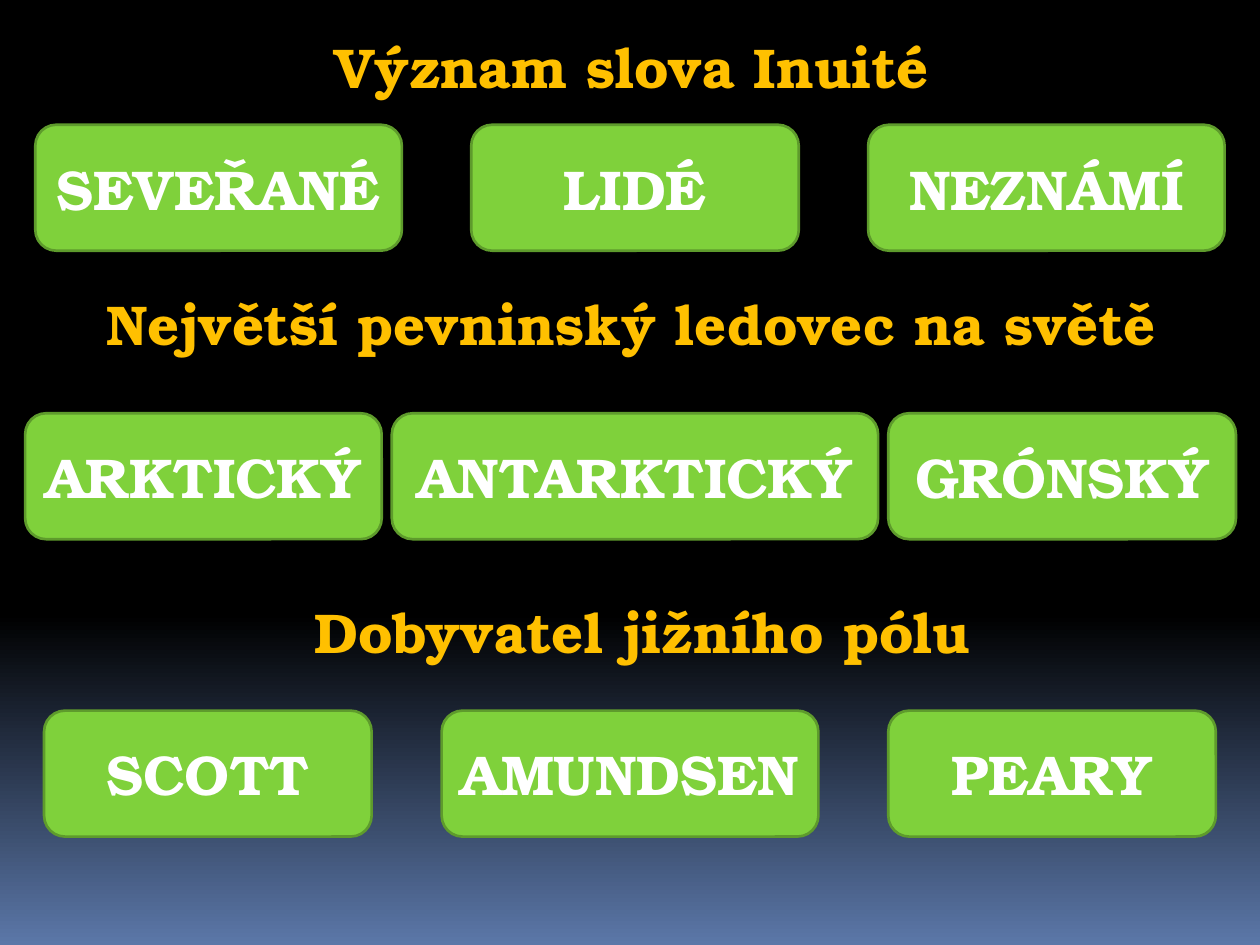
from copy import deepcopy

from pptx import Presentation
from pptx.dml.color import RGBColor
from pptx.enum.shapes import MSO_SHAPE
from pptx.enum.text import MSO_ANCHOR, MSO_AUTO_SIZE, PP_ALIGN
from pptx.oxml.ns import qn
from pptx.util import Inches, Pt

FONT = "TeX Gyre Bonum"
COLS, ROWS = 100, 75
ANSWER_ROWS = 10
TITLE_ROWS = 6.4

prs = Presentation()
prs.slide_width, prs.slide_height = Inches(10), Inches(7.5)


def color(value):
    return RGBColor.from_string(value)


def grid(left, top, width, height):
    col, row = prs.slide_width / COLS, prs.slide_height / ROWS
    return [round(n) for n in (left * col, top * row, width * col, height * row)]


def add_run(p, text, fill):
    r = p.add_run()
    r.text = text
    r.font.name = FONT
    r.font.size = Pt(32)
    r.font.bold = True
    r.font.color.rgb = color(fill)


def set_background(s, stops):
    fill = s.background.fill
    fill.gradient()
    fill.gradient_angle = 270
    gs_list = s._element.find(".//" + qn("a:gsLst"))
    gs_list.insert(1, deepcopy(gs_list[0]))
    for stop, (position, value) in zip(fill.gradient_stops, stops):
        stop.position = position
        stop.color.rgb = color(value)


def add_title(s, box, text):
    sp = s.shapes.add_textbox(*grid(*box))
    tf = sp.text_frame
    tf.word_wrap = False
    tf.auto_size = MSO_AUTO_SIZE.SHAPE_TO_FIT_TEXT
    add_run(tf.paragraphs[0], text, "FFC000")


def add_answer(s, box, text):
    sp = s.shapes.add_shape(MSO_SHAPE.ROUNDED_RECTANGLE, *grid(*box))
    sp.shadow.inherit = False
    sp.fill.solid()
    sp.fill.fore_color.rgb = color("7FD13B")
    sp.line.color.rgb = color("5E9B2C")
    sp.line.width = Pt(1.5)
    tf = sp.text_frame
    tf.vertical_anchor = MSO_ANCHOR.MIDDLE
    p = tf.paragraphs[0]
    p.alignment = PP_ALIGN.CENTER
    add_run(p, text, "FFFFFF")


def add_question(s, box, title, title_left, title_width, answers):
    left, top, width, height = box
    add_title(s, (title_left, top, title_width, TITLE_ROWS), title)
    gap = (width - sum(w for _, w in answers)) / (len(answers) - 1)
    answer_top = top + height - ANSWER_ROWS
    for text, w in answers:
        add_answer(s, (left, answer_top, w, ANSWER_ROWS), text)
        left += w + gap


def main():
    s = prs.slides.add_slide(prs.slide_layouts[6])
    set_background(s, [(0, "000000"), (0.65, "000000"), (1, "5B77A8")])
    add_question(s, (2.8, 2.1, 94.4, 17.8), "Význam slova Inuité", 25.6, 49.8,
                 [("SEVEŘANÉ", 29.1), ("LIDÉ", 26), ("NEZNÁMÍ", 28.3)])
    add_question(s, (2, 22.5, 96.1, 20.3), "Největší pevninský ledovec na světě", 7.5, 86.6,
                 [("ARKTICKÝ", 28.3), ("ANTARKTICKÝ", 38.6), ("GRÓNSKÝ", 27.6)])
    add_question(s, (3.5, 46.9, 93, 19.5), "Dobyvatel jižního pólu", 24, 54.7,
                 [("SCOTT", 26), ("AMUNDSEN", 29.9), ("PEARY", 26)])
    prs.save("out.pptx")


if __name__ == "__main__":
    main()
